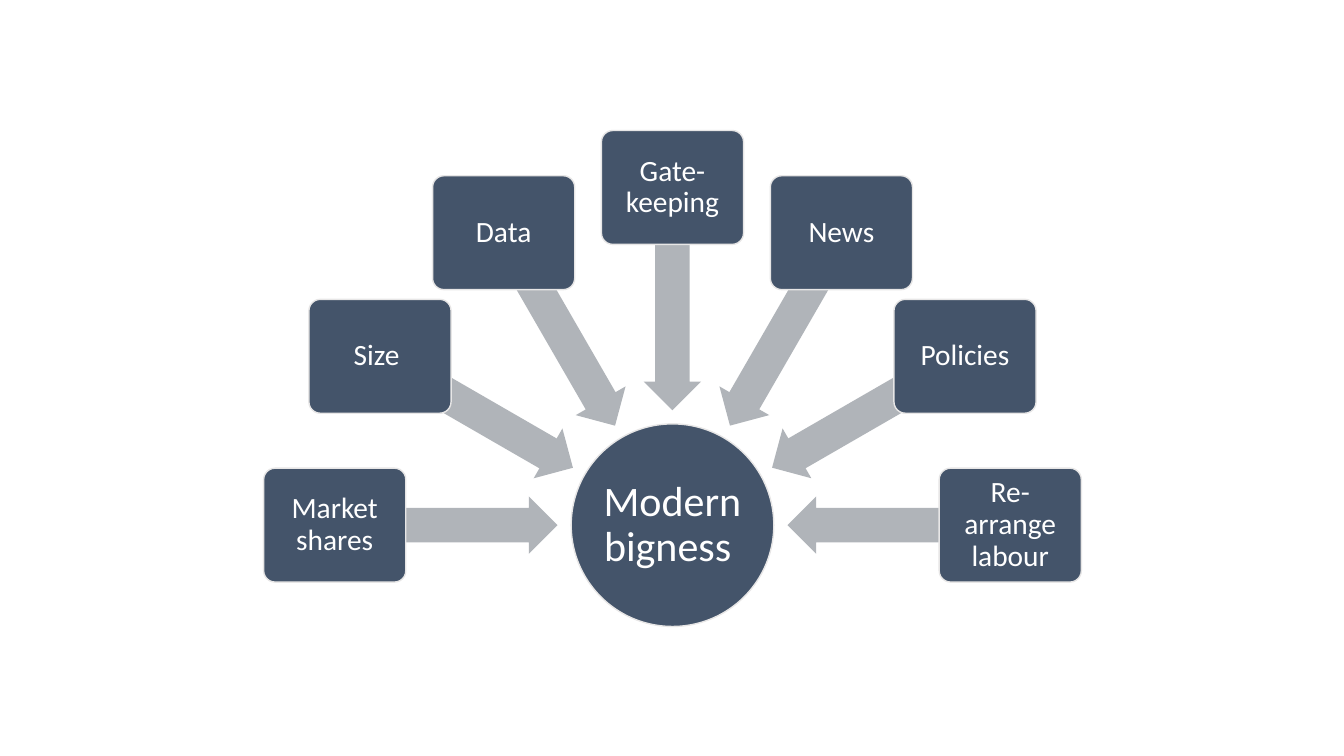
from math import cos, radians, sin

from pptx import Presentation
from pptx.dml.color import RGBColor
from pptx.enum.shapes import MSO_SHAPE as Preset
from pptx.enum.text import MSO_ANCHOR as Anchor, PP_ALIGN as Align
from pptx.util import Inches, Pt

NAVY = RGBColor(0x44, 0x54, 0x6A)
GREY = RGBColor(0xB0, 0xB4, 0xB9)
PALE = RGBColor(0xE7, 0xE6, 0xE6)
WHITE = RGBColor(0xFF, 0xFF, 0xFF)

# Geometry of the fan, in inches
HUB_X, HUB_Y = 6.67, 5.21
HUB_SIZE = (2.01, 2.01)
BOX_SIZE, BOX_RADIUS = (1.41, 1.13), 3.35
ARROW_SIZE, ARROW_RADIUS = (2.22, 0.57), 2.25
START_ANGLE, ANGLE_STEP = 180, 30

HUB_LABEL = "Modern bigness "
FACTORS = ["Market shares", "Size ", "Data", "Gate-keeping", "News",
           "Policies", "Re-arrange labour"]


def add_centred_shape(slide, preset, size, fill, angle=0, radius=0):
    """Place a filled shape around the point at an angle and radius from the hub."""
    width, height = size
    left = HUB_X + radius * cos(radians(angle)) - width / 2
    top = HUB_Y + radius * sin(radians(angle)) - height / 2
    shape = slide.shapes.add_shape(
        preset, Inches(left), Inches(top), Inches(width), Inches(height))
    shape.shadow.inherit = False
    shape.fill.solid()
    shape.fill.fore_color.rgb = fill
    return shape


def add_arrow(slide, angle):
    arrow = add_centred_shape(
        slide, Preset.LEFT_ARROW, ARROW_SIZE, GREY, angle, ARROW_RADIUS)
    arrow.rotation = angle % 360
    arrow.adjustments[0] = 0.6
    arrow.adjustments[1] = 0.5
    arrow.line.fill.background()


def add_label(shape, text, size, inset):
    """Outline a node and write its centred label."""
    shape.line.color.rgb = PALE
    shape.line.width = Pt(1)
    frame = shape.text_frame
    frame.word_wrap = True
    frame.vertical_anchor = Anchor.MIDDLE
    for side in ("left", "top", "right", "bottom"):
        setattr(frame, f"margin_{side}", Inches(inset))
    paragraph = frame.paragraphs[0]
    paragraph.alignment = Align.CENTER
    paragraph.line_spacing = 0.9
    run = paragraph.add_run()
    run.text = text
    for name, value in {"name": "Calibri", "size": Pt(size)}.items():
        setattr(run.font, name, value)
    run.font.color.rgb = WHITE


def add_hub(slide):
    hub = add_centred_shape(slide, Preset.OVAL, HUB_SIZE, NAVY)
    # The oval's own text area already leaves a margin
    add_label(hub, HUB_LABEL, 30, 0)


def add_factor(slide, text, angle):
    box = add_centred_shape(
        slide, Preset.ROUNDED_RECTANGLE, BOX_SIZE, NAVY, angle, BOX_RADIUS)
    box.adjustments[0] = 0.1
    add_label(box, text, 21, 0.05)


def main():
    presentation = Presentation()
    presentation.slide_width = Inches(13.33)
    presentation.slide_height = Inches(7.5)
    slide = presentation.slides.add_slide(presentation.slide_layouts[6])

    # Central idea
    add_hub(slide)

    # Factors fanned around the hub, each box covering the tail of its arrow
    for index, factor in enumerate(FACTORS):
        angle = START_ANGLE + index * ANGLE_STEP
        add_arrow(slide, angle)
        add_factor(slide, factor, angle)

    presentation.save("out.pptx")


if __name__ == "__main__":
    main()
